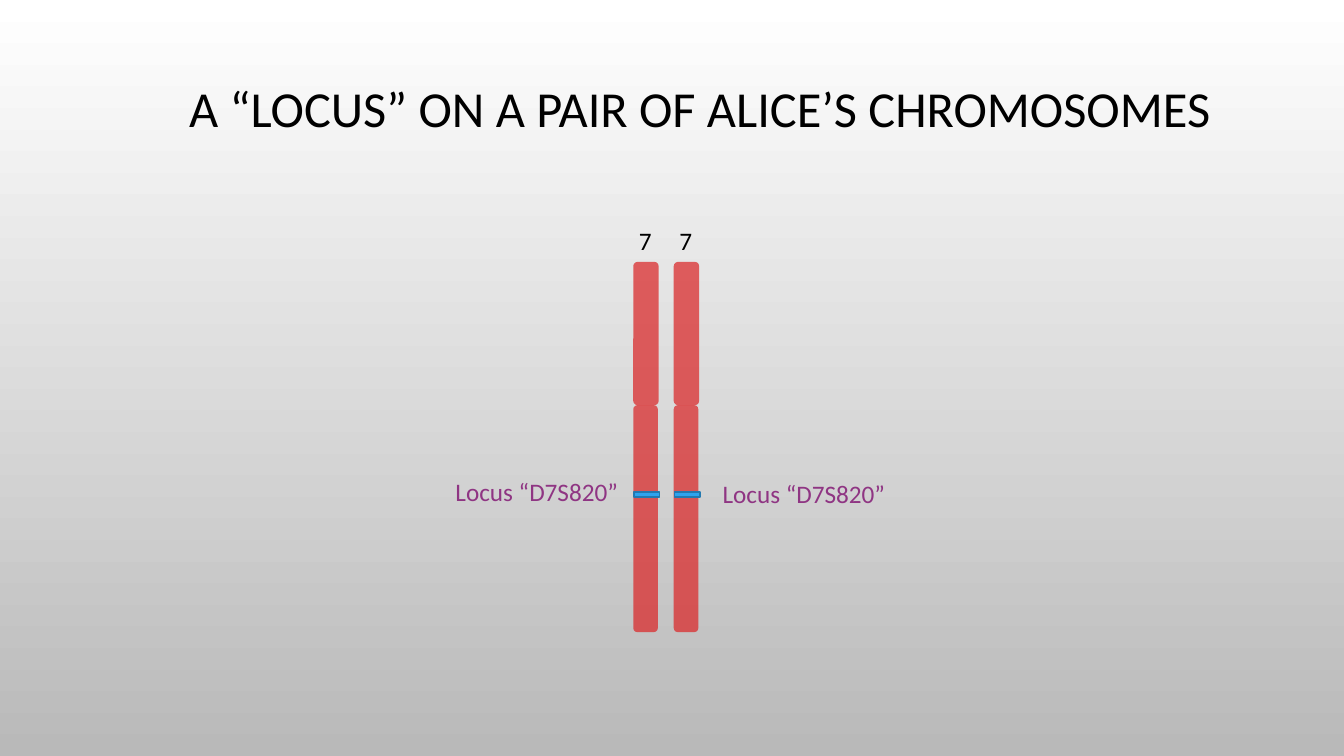
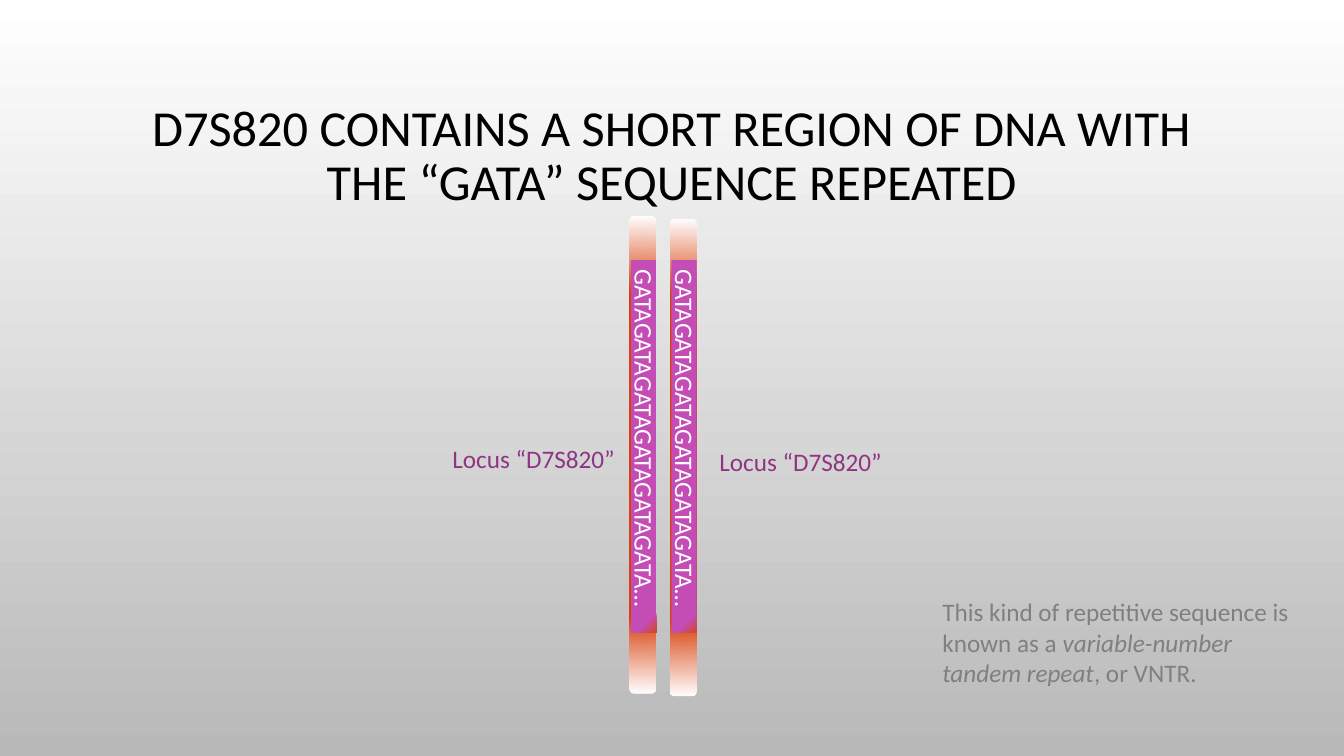
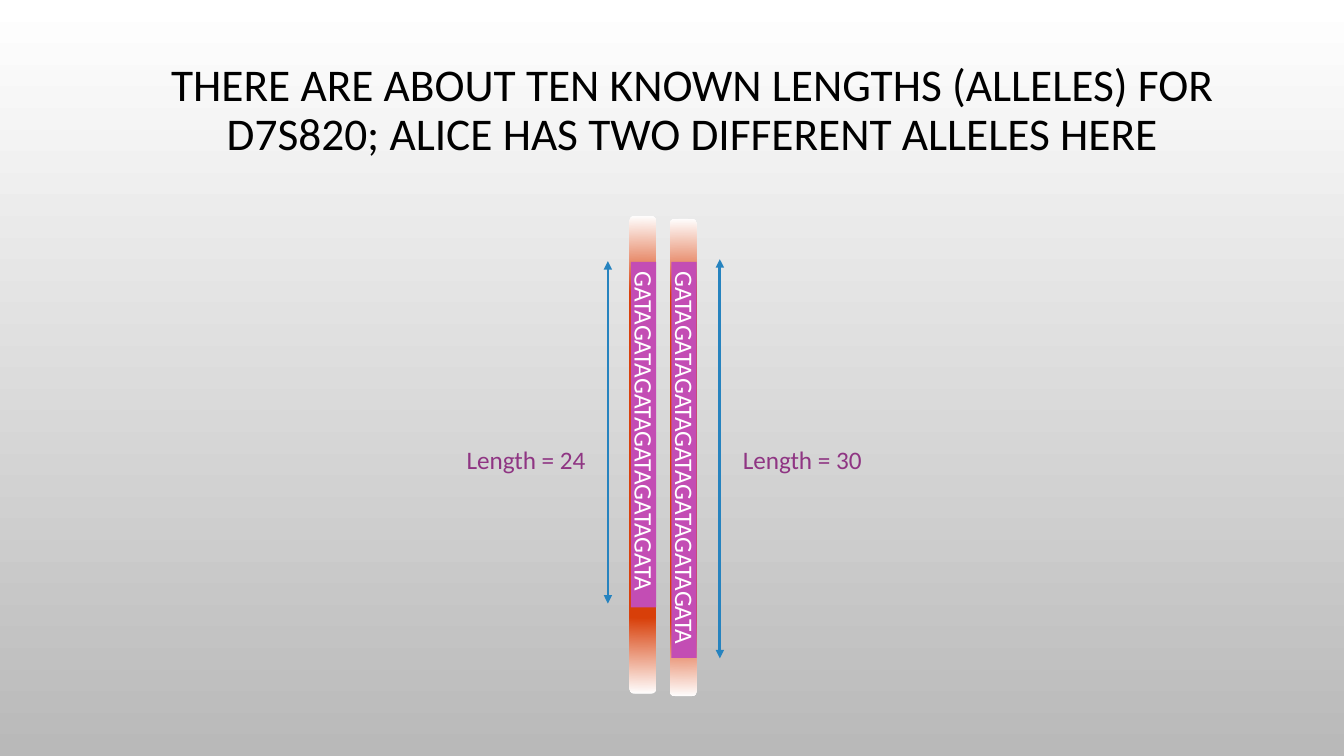
from dataclasses import dataclass

from lxml import etree
from pptx import Presentation
from pptx.dml.color import RGBColor
from pptx.enum import shapes, text
from pptx.oxml import ns
from pptx.util import Cm, Pt


@dataclass(frozen=True)
class Theme:
    font: str = "Calibri"
    title_size: float = 36
    long_title_size: float = 32.4
    body_size: float = 18
    black: str = "000000"
    white: str = "FFFFFF"
    backdrop: str = "B9B9B9"
    chromosome: str = "DA2B2C"
    strand: str = "D83F09"
    repeat: str = "C34DB4"
    repeat_end: str = "D34725"
    locus: str = "2FA3EE"
    locus_edge: str = "2379B0"
    arrow: str = "2683BF"
    label: str = "8F3583"
    note: str = "808080"


theme = Theme()
PAIR_PITCH = 1.02  # cm between the two chromosomes of a pair


def add_text(slide, box, runs, color, size=theme.body_size, wrap=True):
    """Add one paragraph of (words, italic) runs; box is in centimetres."""
    shape = slide.shapes.add_textbox(*map(Cm, box))
    shape.text_frame.word_wrap = wrap
    paragraph = shape.text_frame.paragraphs[0]
    for words, italic in runs:
        run = paragraph.add_run()
        run.text = words
        if italic:
            run.font.italic = True
    paragraph.font.name = theme.font
    paragraph.font.size = Pt(size)
    paragraph.font.color.rgb = RGBColor.from_string(color)
    return shape


def add_block(slide, preset, box, color=None, stops=(), focus=None):
    """Add a plain block, filled with a colour or a circular gradient around focus."""
    shape = slide.shapes.add_shape(preset, *map(Cm, box))
    shape.shadow.inherit = False
    shape.line.fill.background()
    if color:
        shape.fill.solid()
        shape.fill.fore_color.rgb = RGBColor.from_string(color)
        return shape
    shape.fill.gradient()
    for stop, (position, stop_color) in zip(shape.fill.gradient_stops, stops):
        stop.position = position
        stop.color.rgb = RGBColor.from_string(stop_color)
    gradient = shape._element.spPr.find(ns.qn("a:gradFill"))
    gradient.remove(gradient.find(ns.qn("a:lin")))
    circle = etree.SubElement(gradient, ns.qn("a:path"), {"path": "circle"})
    sides = {side: str(percent * 1000) for side, percent in zip("ltrb", focus)}
    etree.SubElement(circle, ns.qn("a:fillToRect"), sides)
    return shape


presentation = Presentation()
presentation.slide_width = Cm(33.87)
presentation.slide_height = Cm(19.05)

backdrop = presentation.slide_master.background.fill
backdrop.gradient()
backdrop.gradient_angle = 270
for stop, position, color in zip(backdrop.gradient_stops, (0, 1), (theme.white, theme.backdrop)):
    stop.position = position
    stop.color.rgb = RGBColor.from_string(color)

# Slides and their titles
titles = [
    ("A “LOCUS” ON A PAIR OF ALICE’S CHROMOSOMES",
     (3.05, 0.79, 29.18, 4.04), theme.title_size),
    ("D7S820 CONTAINS A SHORT REGION OF DNA WITH THE “GATA” SEQUENCE REPEATED",
     (2.54, 1.73, 28.78, 4.45), theme.title_size),
    ("THERE ARE ABOUT TEN KNOWN LENGTHS (ALLELES) FOR D7S820; "
     "ALICE HAS TWO DIFFERENT ALLELES HERE",
     (3.05, 0.79, 28.8, 4.04), theme.long_title_size),
]
slides = []
for words, box, size in titles:
    slide = presentation.slides.add_slide(presentation.slide_layouts[6])
    title = add_text(slide, box, [(words, False)], theme.black, size)
    title.text_frame.vertical_anchor = text.MSO_ANCHOR.MIDDLE
    title.text_frame.paragraphs[0].alignment = text.PP_ALIGN.CENTER
    title.text_frame.paragraphs[0].line_spacing = 0.9
    slides.append(slide)
locus_slide, repeat_slide, allele_slide = slides

# Chromosome pair with the locus marked
for index in range(2):
    left = 15.96 + index * PAIR_PITCH
    for top, width, height in ((6.6, 0.64, 3.61), (10.21, 0.62, 5.72)):
        arm = add_block(locus_slide, shapes.MSO_SHAPE.ROUNDED_RECTANGLE,
                        (left, top, width, height), theme.chromosome)
        arm_color = arm._element.spPr.find(ns.qn("a:solidFill"))[0]
        etree.SubElement(arm_color, ns.qn("a:alpha"), {"val": "74000"})
    add_text(locus_slide, (left - 0.11, 5.56, 0.84, 1.02), [("7", False)], theme.black, wrap=False)
    mark = add_block(locus_slide, shapes.MSO_SHAPE.RECTANGLE,
                     (left + 0.02, 12.4, 0.64, 0.13), theme.locus)
    mark.line.color.rgb = RGBColor.from_string(theme.locus_edge)
    mark.line.width = Pt(1.25)

# Strand pairs: slide, top of repeat, then (repeat height, text length, sequence) for each strand
strand_pairs = [
    (repeat_slide, 6.55, [(9.4, 9.12, "GATA" * 6 + "…")] * 2),
    (allele_slide, 6.6, [(8.71, 8.61, "GATA" * 6), (9.98, 9.98, "GATA" * 7)]),
]
for slide, repeat_top, strands in strand_pairs:
    for index, (repeat_height, text_length, sequence) in enumerate(strands):
        shift = index * PAIR_PITCH
        add_block(slide, shapes.MSO_SHAPE.ROUNDED_RECTANGLE,
                  (15.87 + shift, 5.44 + index * 0.07, 0.66, 12.04),
                  stops=((0.68, theme.strand), (1, theme.white)), focus=(50, 50, 50, 50))
        repeat_box = (15.9 + shift, repeat_top, 0.64, repeat_height)
        if slide is repeat_slide:
            add_block(slide, shapes.MSO_SHAPE.RECTANGLE, repeat_box,
                      stops=((0, theme.repeat_end), (0.05, theme.repeat)),
                      focus=(100, 100, 0, 0))
        else:
            add_block(slide, shapes.MSO_SHAPE.RECTANGLE, repeat_box, theme.repeat)
        center_x = 16.24 + shift
        center_y = repeat_top + text_length / 2
        letters = add_text(slide, (center_x - text_length / 2, center_y - 0.51, text_length, 1.02),
                           [(sequence, False)], theme.white, wrap=False)
        letters.rotation = 90

# Labels beside the pairs
labels = [
    (locus_slide, "Locus “D7S820”", 11.23, 11.89, 4.93),
    (locus_slide, "Locus “D7S820”", 17.96, 11.94, 4.93),
    (repeat_slide, "Locus “D7S820”", 11.15, 11.05, 4.93),
    (repeat_slide, "Locus “D7S820”", 17.88, 11.13, 4.93),
    (allele_slide, "Length = 24", 11.51, 11.07, 3.61),
    (allele_slide, "Length = 30", 18.47, 11.07, 4.93),
]
for slide, words, left, top, width in labels:
    add_text(slide, (left, top, width, 1.02), [(words, False)], theme.label)

add_text(repeat_slide, (23.5, 14.91, 9.93, 2.57),
         [("This kind of repetitive sequence is known as a ", False),
          ("variable-number tandem repeat", True),
          (", or VNTR.", False)], theme.note)

# Arrows measuring the two alleles
for x, top, bottom in ((15.32, 6.58, 15.21), (18.14, 6.53, 16.59)):
    arrow = allele_slide.shapes.add_connector(
        shapes.MSO_CONNECTOR.STRAIGHT, Cm(x), Cm(top), Cm(x), Cm(bottom))
    arrow.line.color.rgb = RGBColor.from_string(theme.arrow)
    arrow.line.width = Pt(2)
    for end in ("a:headEnd", "a:tailEnd"):
        etree.SubElement(arrow.line._get_or_add_ln(), ns.qn(end), {"type": "triangle"})
    etree.SubElement(arrow._element.spPr, ns.qn("a:effectLst"))

presentation.save("out.pptx")
